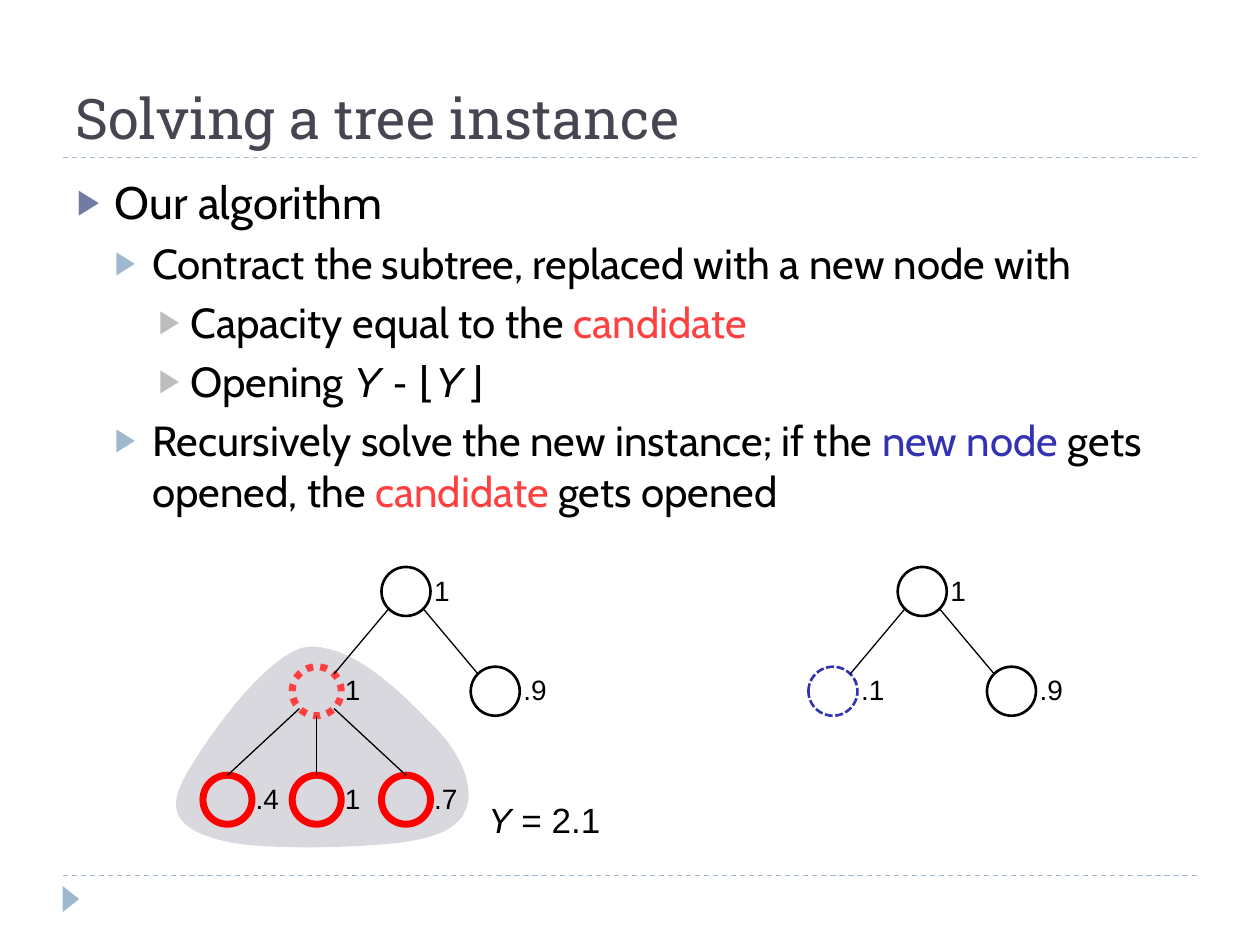
from dataclasses import dataclass
from math import sqrt

from lxml.etree import SubElement
from pptx import Presentation
from pptx.dml.color import RGBColor
from pptx.enum.dml import MSO_LINE_DASH_STYLE as Dash
from pptx.enum.shapes import MSO_CONNECTOR as Connector, MSO_SHAPE as Shape
from pptx.enum.text import MSO_ANCHOR as Anchor, MSO_AUTO_SIZE as AutoSize, PP_ALIGN as Align
from pptx.oxml.ns import qn
from pptx.util import Pt


@dataclass(frozen=True)
class Theme:
    title_font: str = "Roboto Slab"
    body_font: str = "Cabin"
    label_font: str = "Arial"
    title_size: int = 32
    lead_size: int = 26
    body_size: int = 24
    formula_size: int = 20
    label_size: int = 16
    gap_size: int = 9
    title: str = "464653"
    text: str = "000000"
    accent: str = "9FB8CD"
    candidate: str = "FF4040"
    new_node: str = "3333B2"
    leaf: str = "FF0000"
    subtree: str = "D8D8DE"
    bullets: tuple = ("727CA3", "9FB8CD", "BDBDBD")


THEME = Theme()
RADIUS = 14
COLUMN = 51
CHILD_DROP = 57
LEAF_DROP = 62


def rgb(value):
    return RGBColor.from_string(value)


def add_run(paragraph, text, size, font=THEME.body_font, color=THEME.text, italic=False):
    run = paragraph.add_run()
    run.text = text
    run.font.name = font
    run.font.size = Pt(size)
    run.font.italic = italic
    run.font.color.rgb = rgb(color)


def add_line(slide, start, end, color=THEME.text, dash=None):
    line = slide.shapes.add_connector(Connector.STRAIGHT, *map(Pt, start + end))
    line.line.color.rgb = rgb(color)
    line.line.width = Pt(0.75)
    if dash:
        line.line.dash_style = dash
    SubElement(line._element.spPr, qn("a:effectLst"))


def place(shape, left, top, width, height):
    shape.left, shape.top, shape.width, shape.height = map(Pt, (left, top, width, height))


def add_frame(slide, left, right, header, footer):
    for y in (footer, header):
        add_line(slide, (left, y), (right, y), THEME.accent, Dash.DASH)
    marker = slide.shapes.add_shape(
        Shape.ISOSCELES_TRIANGLE, Pt(left - 3), Pt(footer + 8.6), Pt(15), Pt(9.5))
    marker.rotation = 90
    marker.shadow.inherit = False
    marker.fill.solid()
    marker.fill.fore_color.rgb = rgb(THEME.accent)
    marker.line.fill.background()


def fill_title(slide, box):
    title = slide.shapes.title
    place(title, *box)
    frame = title.text_frame
    frame.auto_size = AutoSize.NONE
    frame.vertical_anchor = Anchor.BOTTOM
    paragraph = frame.paragraphs[0]
    paragraph.alignment = Align.LEFT
    add_run(paragraph, "Solving a tree instance", THEME.title_size, THEME.title_font, THEME.title)


def format_bullet(paragraph, level):
    paragraph.level = level
    paragraph.space_before = Pt(5 if level else 6)
    properties = paragraph._p.get_or_add_pPr()
    properties.set("marL", str(Pt(21.6 * (level + 1))))
    properties.set("indent", str(Pt(-18 if level == 2 else -21.6)))
    color = SubElement(properties, qn("a:buClr"))
    SubElement(color, qn("a:srgbClr"), val=THEME.bullets[level])
    SubElement(properties, qn("a:buSzPct"), val="76000")
    SubElement(properties, qn("a:buChar"), char="▶")


def fill_body(slide, box):
    candidate = ("candidate", {"color": THEME.candidate})
    upright = {"font": THEME.label_font}
    slanted = {"font": THEME.label_font, "italic": True}
    items = [
        (0, [("Our algorithm", {"size": THEME.lead_size})]),
        (1, [("Contract the subtree, replaced with a new node with", {})]),
        (2, [("Capacity equal to the ", {}), candidate]),
        (2, [("Opening ", {}), ("Y", slanted), (" - ⌊", upright), ("Y", slanted),
             (" ", {**slanted, "size": THEME.gap_size}), ("⌋", upright)]),
        (1, [("Recursively solve the new instance; if the ", {}),
             ("new node", {"color": THEME.new_node}),
             (" gets opened, the ", {}), candidate, (" gets opened", {})]),
    ]
    body = slide.placeholders[1]
    place(body, *box)
    frame = body.text_frame
    frame.auto_size = AutoSize.NONE
    for index, (level, runs) in enumerate(items):
        paragraph = frame.add_paragraph() if index else frame.paragraphs[0]
        format_bullet(paragraph, level)
        for text, style in runs:
            add_run(paragraph, text, **{"size": THEME.body_size, **style})


def add_text_box(slide, left, top, width, height):
    box = slide.shapes.add_textbox(*map(Pt, (left, top, width, height)))
    box.text_frame.word_wrap = True
    return box.text_frame


def add_node(slide, center, label, color=THEME.text, width=1.5, dash=None):
    x, y = center
    node = slide.shapes.add_shape(
        Shape.OVAL, Pt(x - RADIUS), Pt(y - RADIUS), Pt(2 * RADIUS), Pt(2 * RADIUS))
    node.shadow.inherit = False
    node.fill.background()
    node.line.color.rgb = rgb(color)
    node.line.width = Pt(width)
    if dash:
        node.line.dash_style = dash
    frame = add_text_box(slide, x + 9, y - RADIUS, 30, 26.5)
    add_run(frame.paragraphs[0], label, THEME.label_size, THEME.label_font)


def rim(center, side):
    offset = RADIUS / sqrt(2)
    return center[0] + side * offset, center[1] + (offset if side else RADIUS)


def add_pair_tree(slide, left, top, left_label, left_style):
    root = (left + 2 * COLUMN + RADIUS, top + RADIUS)
    add_node(slide, root, "1")
    for side, label, style in ((-1, left_label, left_style), (1, ".9", {})):
        child = (root[0] + side * COLUMN, root[1] + CHILD_DROP)
        add_node(slide, child, label, **style)
        x, y = rim(child, -side)
        add_line(slide, rim(root, side), (x, 2 * child[1] - y))


def add_subtree_area(slide, left, top):
    start = (13.6, 157)
    curves = [
        ((35.2, 162), (93.5, 160.5), (116.5, 157)),
        ((139.6, 153.4), (148.2, 146.2), (151.1, 136)),
        ((154, 125.3), (148.2, 108), (133.8, 92.9)),
        ((118.7, 77.8), (90.6, 46), (61.8, 45.4)),
        ((37.4, 45.4), (-5, 107.3), (-13, 125.3)),
        ((-21, 144), (-8, 152), (13.6, 157)),
    ]
    points = []
    current = start
    for first, second, end in curves:
        for step in range(1, 17):
            t = step / 16
            weights = ((1 - t) ** 3, 3 * t * (1 - t) ** 2, 3 * t * t * (1 - t), t ** 3)
            corners = (current, first, second, end)
            points.append(tuple(
                Pt(origin + sum(w * corner[axis] for w, corner in zip(weights, corners)))
                for axis, origin in enumerate((left, top))))
        current = end
    builder = slide.shapes.build_freeform(Pt(left + start[0]), Pt(top + start[1]))
    builder.add_line_segments(points)
    area = builder.convert_to_shape()
    area.shadow.inherit = False
    area.fill.solid()
    area.fill.fore_color.rgb = rgb(THEME.subtree)
    area.line.fill.background()


def add_full_tree(slide, left, top):
    add_subtree_area(slide, left, top)
    candidate_style = {"color": THEME.candidate, "width": 4, "dash": Dash.ROUND_DOT}
    add_pair_tree(slide, left, top, "1", candidate_style)
    parent = (left + COLUMN + RADIUS, top + RADIUS + CHILD_DROP)
    for side, label in ((-1, ".4"), (0, "1"), (1, ".7")):
        leaf = (parent[0] + side * COLUMN, parent[1] + LEAF_DROP)
        add_node(slide, leaf, label, THEME.leaf, 4)
        add_line(slide, rim(parent, side), (leaf[0], leaf[1] - RADIUS))
    frame = add_text_box(slide, left + 163, top + 132.5, 322, 29.5)
    frame.margin_left = frame.margin_right = frame.margin_top = frame.margin_bottom = 0
    paragraph = frame.paragraphs[0]
    paragraph.space_before = Pt(5)
    add_run(paragraph, "Y", THEME.formula_size, THEME.label_font, italic=True)
    add_run(paragraph, " = 2.1", THEME.formula_size, THEME.label_font)


def main():
    presentation = Presentation()
    presentation.slide_width, presentation.slide_height = Pt(720), Pt(540)
    slide = presentation.slides.add_slide(presentation.slide_layouts[1])
    add_frame(slide, 36, 684, 90, 500.4)
    fill_title(slide, (36, 12.2, 648, 77.8))
    fill_body(slide, (36.7, 95.8, 648, 401))
    add_full_tree(slide, 116, 324)
    new_style = {"color": THEME.new_node, "dash": Dash.SQUARE_DOT}
    add_pair_tree(slide, 411, 324, ".1", new_style)
    presentation.save("out.pptx")


if __name__ == "__main__":
    main()
